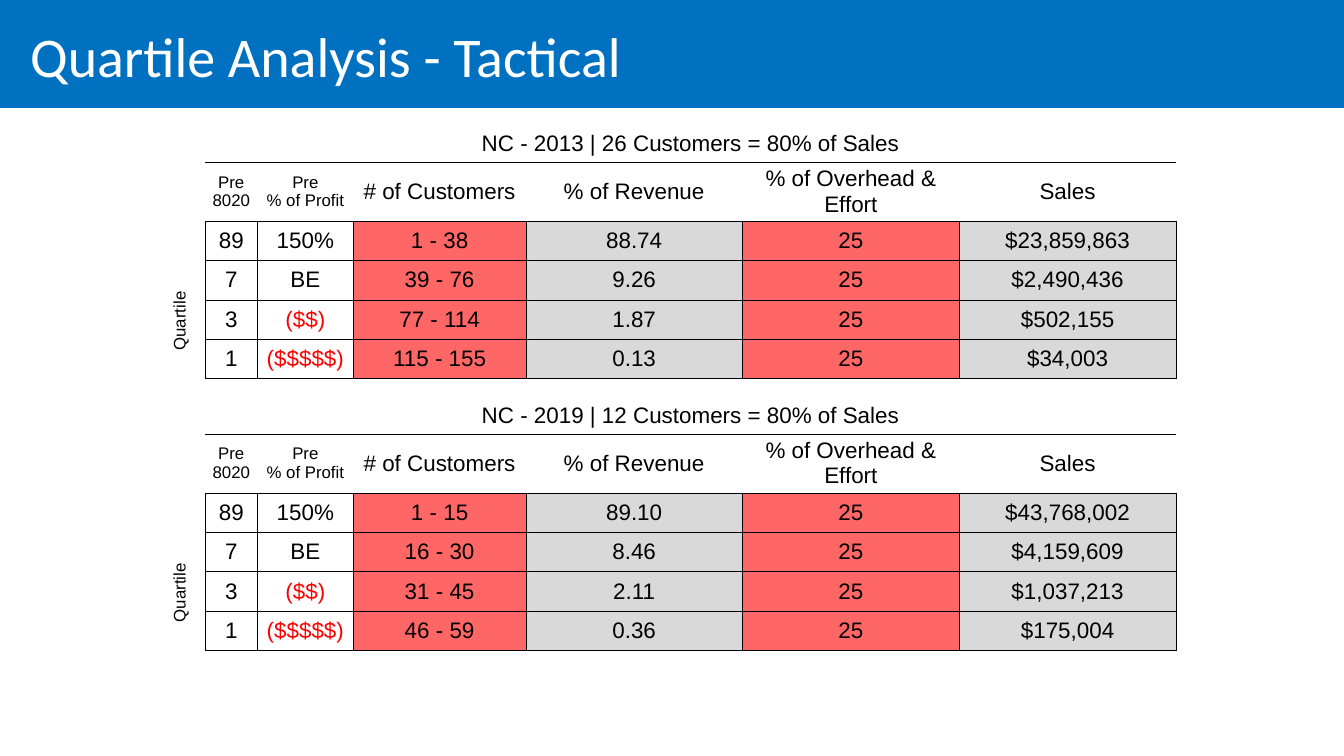
from lxml.etree import SubElement
from pptx import Presentation
from pptx.dml.color import RGBColor as RGB
from pptx.enum.shapes import MSO_SHAPE as SHAPE
from pptx.enum.text import MSO_ANCHOR as ANCHOR, PP_ALIGN as ALIGN
from pptx.oxml.ns import qn
from pptx.util import Pt

COLORS = {"blue": "0070C0", "white": "FFFFFF", "black": "000000",
          "red": "FF0000", "coral": "FF6666", "gray": "D9D9D9"}
NO_STYLE = "{2D5ABB26-0587-4C30-8999-92F81FD0307C}"
COL_WIDTHS = [53.3, 74.2, 137.5, 246.2, 309.6, 309.6, 309.6]
ROW_HEIGHTS = [52.6, 84.2] + [56.2] * 4
HEADERS = ["Pre 8020", "Pre\n% of Profit", "# of Customers", "% of Revenue",
           "% of Overhead & Effort", "Sales"]
FILLS = [None, None, "coral", "gray", "coral", "gray"]
PRE_8020 = ["89", "7", "3", "1"]
PRE_PROFIT = ["150%", "BE", "($$)", "($$$$$)"]
OVERHEAD = "25"
QUARTILES = [
    (179.3, "NC - 2013 | 26 Customers = 80% of Sales", [
        ("1 - 38", "88.74", "$23,859,863"),
        ("39 - 76", "9.26", "$2,490,436"),
        ("77 - 114", "1.87", "$502,155"),
        ("115 - 155", "0.13", "$34,003")]),
    (567.4, "NC - 2019 | 12 Customers = 80% of Sales", [
        ("1 - 15", "89.10", "$43,768,002"),
        ("16 - 30", "8.46", "$4,159,609"),
        ("31 - 45", "2.11", "$1,037,213"),
        ("46 - 59", "0.36", "$175,004")]),
]


class Deck:
    def __init__(self, width, height):
        self.prs = Presentation()
        self.prs.slide_width, self.prs.slide_height = Pt(width), Pt(height)
        self.s = self.prs.slides.add_slide(self.prs.slide_layouts[6])

    def color(self, name):
        return RGB.from_string(COLORS[name])

    def set_text(self, tf, text, size, font="Arial", color="black", align=ALIGN.CENTER):
        tf.text = text
        for p in tf.paragraphs:
            p.alignment = align
            for r in p.runs:
                r.font.size, r.font.name = Pt(size), font
                r.font.color.rgb = self.color(color)

    def band(self, x, y, w, h, color):
        sp = self.s.shapes.add_shape(SHAPE.RECTANGLE, Pt(x), Pt(y), Pt(w), Pt(h))
        sp.shadow.inherit = False
        sp.fill.solid()
        sp.fill.fore_color.rgb = sp.line.color.rgb = self.color(color)
        sp.line.width = Pt(0.75)

    def title(self, x, y, w, h, text):
        tf = self.s.shapes.add_textbox(Pt(x), Pt(y), Pt(w), Pt(h)).text_frame
        tf.word_wrap = True
        tf.vertical_anchor = ANCHOR.MIDDLE
        self.set_text(tf, text, 80, "Calibri", "white", ALIGN.LEFT)

    def table(self, x, y, widths, heights):
        frame = self.s.shapes.add_table(len(heights), len(widths), Pt(x), Pt(y),
                                        Pt(sum(widths)), Pt(sum(heights)))
        table = frame.table
        table.first_row = table.horz_banding = False
        frame._element.find(".//" + qn("a:tableStyleId")).text = NO_STYLE
        for col, width in zip(table.columns, widths):
            col.width = Pt(width)
        for row, height in zip(table.rows, heights):
            row.height = Pt(height)
        return table

    def cell(self, cell, text="", size=32, color="black", fill=None, sides="",
             align=ALIGN.CENTER):
        cell.vertical_anchor = ANCHOR.MIDDLE
        self.set_text(cell.text_frame, text, size, color=color, align=align)
        for side in sides:
            ln = SubElement(cell._tc.get_or_add_tcPr(), qn("a:ln" + side), w=str(Pt(1)))
            SubElement(SubElement(ln, qn("a:solidFill")), qn("a:srgbClr"), val=COLORS["black"])
        if fill:
            cell.fill.solid()
            cell.fill.fore_color.rgb = self.color(fill)
        else:
            cell.fill.background()

    def side_label(self, cell, text, indent):
        self.cell(cell, text, 24, align=ALIGN.LEFT)
        cell._tc.get_or_add_tcPr().set("vert", "vert270")
        cell.text_frame.paragraphs[0]._p.get_or_add_pPr().set("marL", str(Pt(indent)))

    def quartile_table(self, y, heading, rows):
        table = self.table(240, y, COL_WIDTHS, ROW_HEIGHTS)
        table.cell(0, 1).merge(table.cell(0, 6))
        table.cell(1, 0).merge(table.cell(5, 0))
        self.cell(table.cell(0, 0))
        self.side_label(table.cell(1, 0), "Quartile", 33)
        for c, header in enumerate(HEADERS, 1):
            self.cell(table.cell(0, c), heading if c == 1 else "", sides="B")
            self.cell(table.cell(1, c), header, 24 if c < 3 else 32, sides="TB")
        for r, (pre, profit, row) in enumerate(zip(PRE_8020, PRE_PROFIT, rows), 2):
            customers, revenue, sales = row
            values = [pre, profit, customers, revenue, OVERHEAD, sales]
            for c, (value, fill) in enumerate(zip(values, FILLS), 1):
                color = "red" if value.startswith("(") else "black"
                self.cell(table.cell(r, c), value, color=color, fill=fill, sides="LRTB")


def main():
    deck = Deck(1920, 1080)
    deck.band(0, 0, 1920, 153.4, "blue")
    deck.title(36, 28.8, 1836, 100.8, "Quartile Analysis - Tactical")
    for y, heading, rows in QUARTILES:
        deck.quartile_table(y, heading, rows)
    deck.prs.save("out.pptx")


if __name__ == "__main__":
    main()
